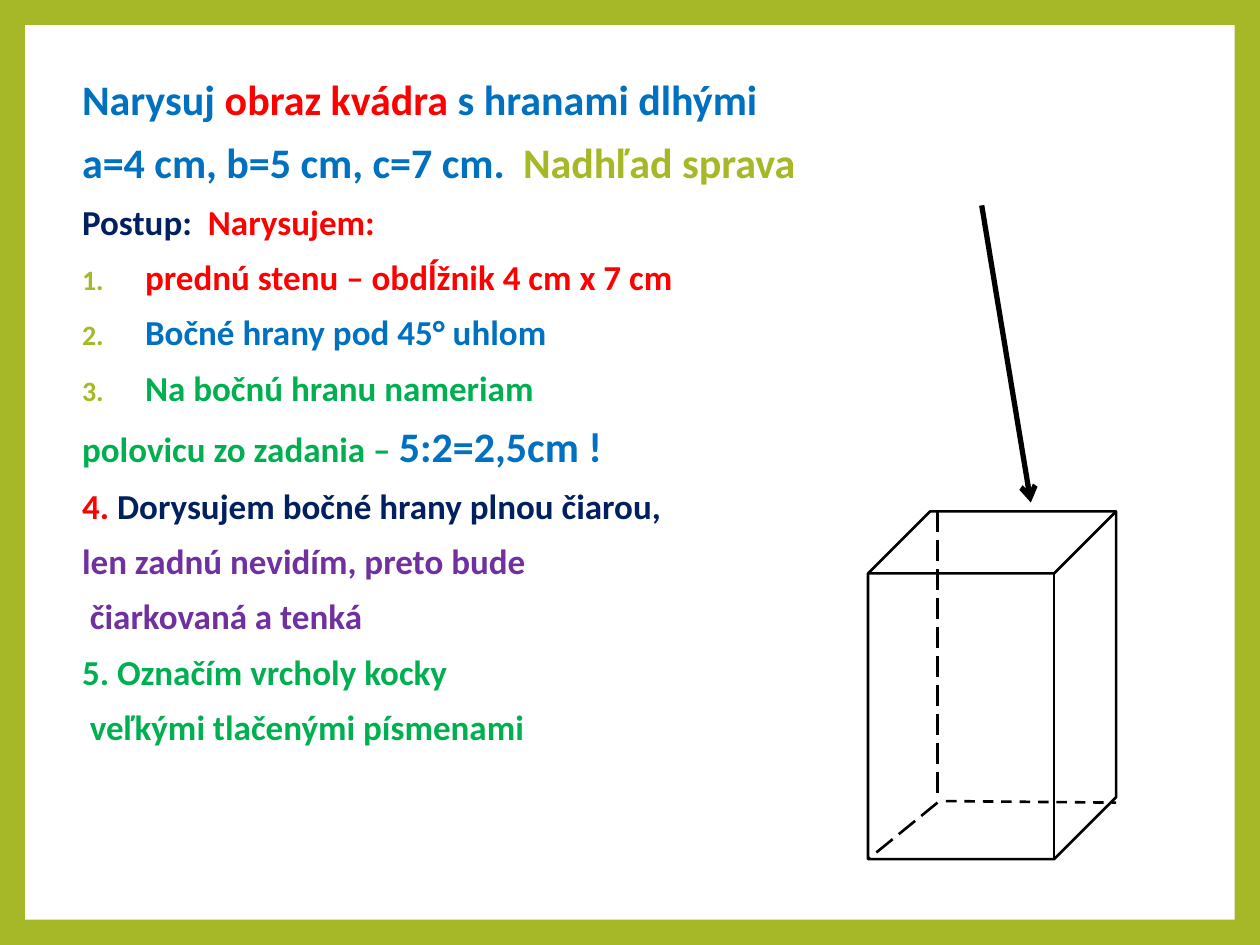
from lxml import etree
from pptx import Presentation
from pptx.dml.color import RGBColor
from pptx.enum.dml import MSO_LINE
from pptx.enum.shapes import MSO_CONNECTOR, MSO_SHAPE
from pptx.enum.text import MSO_ANCHOR, MSO_AUTO_SIZE, PP_ALIGN
from pptx.oxml.ns import qn
from pptx.util import Cm, Pt

STRAIGHT = MSO_CONNECTOR.STRAIGHT
DASH, LONG_DASH = MSO_LINE.DASH, MSO_LINE.LONG_DASH
FONT = "Calibri"
COLORS = {
    "lime": "A6B727", "white": "FFFFFF", "black": "000000", "blue": "0070C0",
    "red": "FF0000", "navy": "002060", "green": "00B050", "purple": "7030A0",
}
PAGE_WIDTH, PAGE_HEIGHT, BORDER = 25.4, 19.05, 0.51
BODY_BOX = (1.4, 1.47, 22.73, 16.26)
CUBOID_BOX = (17.5, 10.31, 5, 7.01)
INDENT, TAB_STOP = 1.27, 9.53

# Each line: numbered or not, then its spans as (text, size, colour)
LINES = [
    (False, [("Narysuj ", 24, "blue"), ("obraz kvádra ", 24, "red"),
             ("s hranami dlhými", 24, "blue")]),
    (False, [("a=4 cm, b=5 cm, c=7 cm.\t", 24, "blue"), ("Nadhľad sprava", 24, "lime")]),
    (False, [("Postup:  ", 20, "navy"), ("Narysujem:", 20, "red")]),
    (True, [("prednú stenu – obdĺžnik 4 cm x 7 cm", 20, "red")]),
    (True, [("Bočné hrany pod 45° uhlom", 20, "blue")]),
    (True, [("Na bočnú hranu nameriam", 20, "green")]),
    (False, [("polovicu zo zadania – ", 20, "green"), ("5:2=2,5cm !", 24, "blue")]),
    (False, [("4. ", 20, "red"), ("Dorysujem bočné hrany plnou čiarou,", 20, "navy")]),
    (False, [("len zadnú nevidím, preto bude", 20, "purple")]),
    (False, [(" čiarkovaná a tenká", 20, "purple")]),
    (False, [("5. Označím vrcholy kocky", 20, "green")]),
    (False, [(" veľkými tlačenými písmenami", 20, "green")]),
]


def color(name):
    return RGBColor.from_string(COLORS[name])


def add_background(page):
    """Lime page with a white panel behind everything else."""
    page.background.fill.solid()
    page.background.fill.fore_color.rgb = color("lime")
    panel = page.shapes.add_shape(
        MSO_SHAPE.RECTANGLE, Cm(BORDER), Cm(BORDER),
        Cm(PAGE_WIDTH - 2 * BORDER), Cm(PAGE_HEIGHT - 2 * BORDER))
    panel.shadow.inherit = False
    panel.fill.solid()
    panel.fill.fore_color.rgb = color("white")
    panel.line.fill.background()
    tree = panel._element.getparent()
    tree.insert(2, panel._element)


def set_marker(para, numbered):
    """Sets the indent, the number (or none) and the tab stop."""
    props = para._p.get_or_add_pPr()
    props.set("marL", str(Cm(INDENT) if numbered else 0))
    props.set("indent", str(-Cm(INDENT) if numbered else 0))
    if numbered:
        marker_color = etree.SubElement(props, qn("a:buClr"))
        etree.SubElement(marker_color, qn("a:srgbClr"), val=COLORS["lime"])
        etree.SubElement(props, qn("a:buSzPct"), val="80000")
        etree.SubElement(props, qn("a:buFont"), typeface=FONT)
        etree.SubElement(props, qn("a:buAutoNum"), type="arabicPeriod")
    else:
        etree.SubElement(props, qn("a:buNone"))
    tabs = etree.SubElement(props, qn("a:tabLst"))
    etree.SubElement(tabs, qn("a:tab"), pos=str(Cm(TAB_STOP)), algn="l")


def fill_body(body, box):
    body.left, body.top, body.width, body.height = map(Cm, box)
    frame = body.text_frame
    frame.word_wrap = True
    frame.auto_size = MSO_AUTO_SIZE.NONE
    frame.vertical_anchor = MSO_ANCHOR.TOP
    for number, (numbered, spans) in enumerate(LINES):
        para = frame.add_paragraph() if number else frame.paragraphs[0]
        para.alignment = PP_ALIGN.LEFT
        para.line_spacing = 0.9
        para.space_before = Pt(10)
        set_marker(para, numbered)
        for text, size, name in spans:
            span = para.add_run()
            span.text = text
            span.font.name = FONT
            span.font.size = Pt(size)
            span.font.bold = True
            span.font.color.rgb = color(name)


def add_line(page, box, start, end, width=1.5, dash=None):
    """Straight black line between two points measured from the box corner."""
    left, top = box[:2]
    line = page.shapes.add_connector(
        STRAIGHT, Cm(left + start[0]), Cm(top + start[1]),
        Cm(left + end[0]), Cm(top + end[1]))
    line.line.color.rgb = color("black")
    line.line.width = Pt(width)
    if dash:
        line.line.dash_style = dash
    etree.SubElement(line._element.spPr, qn("a:effectLst"))
    return line


def add_cuboid(page, box):
    """Cuboid with its hidden edges and the arrow of the viewing direction."""
    cuboid = page.shapes.add_shape(MSO_SHAPE.CUBE, *map(Cm, box))
    cuboid.shadow.inherit = False
    cuboid.fill.background()
    cuboid.line.color.rgb = color("black")
    cuboid.line.width = Pt(1.5)

    width, height = box[2:]
    add_line(page, box, (1.4, 0), (1.4, 5.82), dash=LONG_DASH)
    add_line(page, box, (1.57, 5.84), (width, 5.87), dash=DASH)
    add_line(page, box, (1.4, 5.87), (0, height), dash=LONG_DASH)

    arrow = add_line(page, box, (2.29, -6.17), (3.28, -0.18), width=3)
    etree.SubElement(arrow.line._get_or_add_ln(), qn("a:tailEnd"), type="arrow")


def main():
    deck = Presentation()
    deck.slide_width, deck.slide_height = Cm(PAGE_WIDTH), Cm(PAGE_HEIGHT)
    page = deck.slides.add_slide(deck.slide_layouts[1])
    title = page.shapes.title._element
    title.getparent().remove(title)
    add_background(page)
    fill_body(page.placeholders[1], BODY_BOX)
    add_cuboid(page, CUBOID_BOX)
    deck.save("out.pptx")


if __name__ == "__main__":
    main()
